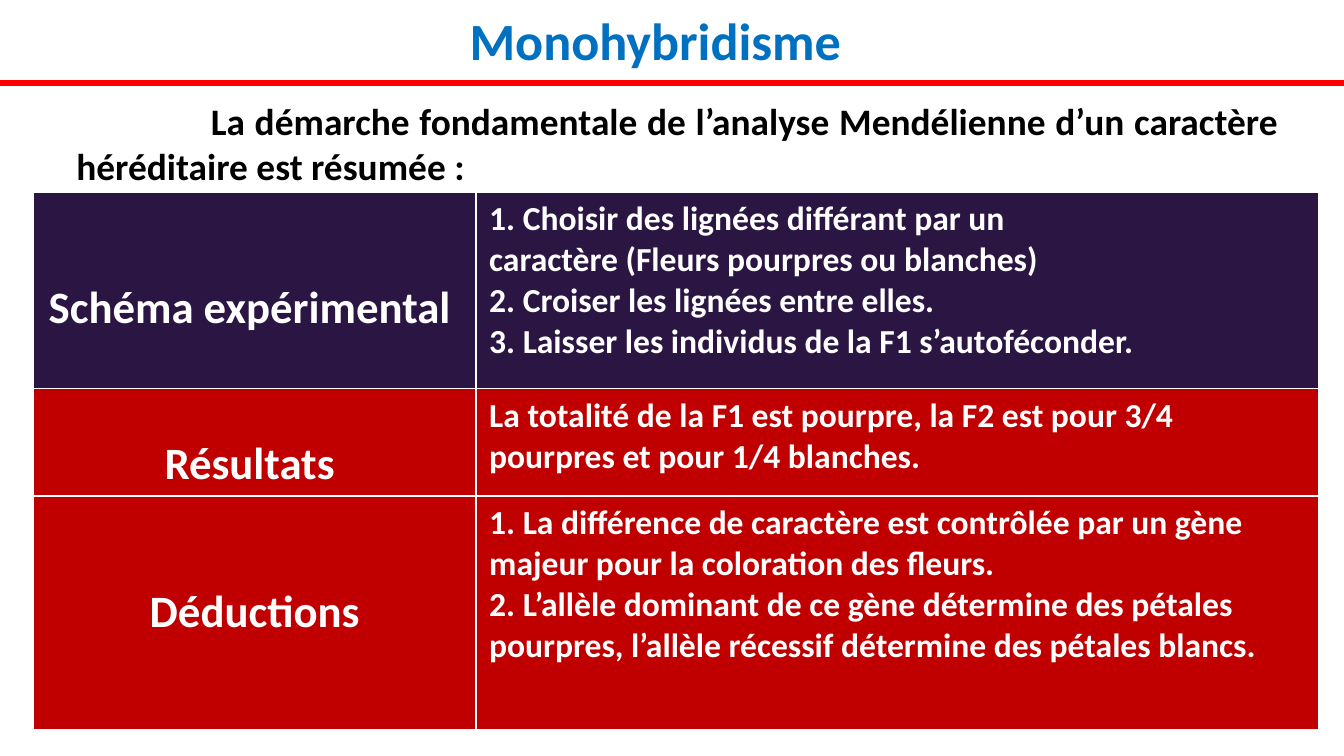
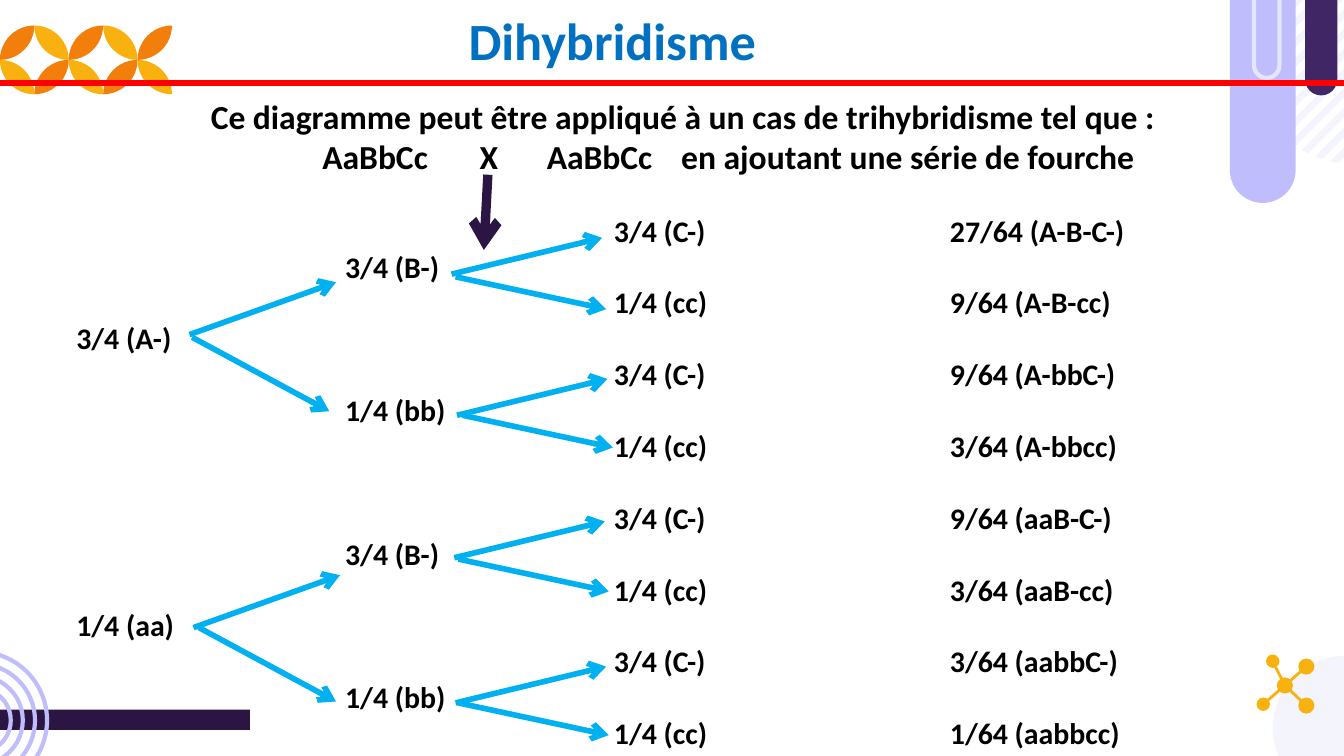
"""Builds two genetics slides: a monohybrid summary table and a trihybrid fork diagram."""
import math

import lxml.etree
import pptx
import pptx.dml.color
import pptx.enum.shapes
import pptx.enum.text
import pptx.oxml.ns
import pptx.util

Inches = pptx.util.Inches
Pt = pptx.util.Pt
qn = pptx.oxml.ns.qn
SHAPE = pptx.enum.shapes.MSO_SHAPE
ALIGN = pptx.enum.text.PP_ALIGN
FONT = "Calibri"
COLORS = {
    "title": "0070C0", "rule": "FF0000", "text": "000000", "white": "FFFFFF",
    "plum": "2A1543", "crimson": "C00000", "sky": "00B0F0", "violet": "402664",
    "lilac": "BFBDFC", "clip": "E5E6FC", "mist": "F4F4FD",
    "orange": "F27F0C", "yellow": "F9B110",
}


def paint(shape, fill=None, line=None, width=2.25):
    shape.shadow.inherit = False
    if fill:
        shape.fill.solid()
        shape.fill.fore_color.rgb = pptx.dml.color.RGBColor.from_string(COLORS[fill])
    else:
        shape.fill.background()
    if line:
        shape.line.color.rgb = pptx.dml.color.RGBColor.from_string(COLORS[line])
        shape.line.width = Pt(width)
    else:
        shape.line.fill.background()


def draw_line(page, start, end, color, width, arrow=False):
    line = page.shapes.add_connector(
        pptx.enum.shapes.MSO_CONNECTOR.STRAIGHT, *map(Inches, start + end))
    line.line.color.rgb = pptx.dml.color.RGBColor.from_string(COLORS[color])
    line.line.width = Pt(width)
    if arrow:
        lxml.etree.SubElement(line.line._get_or_add_ln(), qn("a:tailEnd"), type="arrow")
    lxml.etree.SubElement(line._element.spPr, qn("a:effectLst"))


deck = pptx.Presentation()
deck.slide_width = Inches(10)
deck.slide_height = deck.slide_width * 9 // 16
mono_page, fork_page = [deck.slides.add_slide(deck.slide_layouts[6]) for _ in range(2)]

bar = fork_page.shapes.add_shape(
    SHAPE.RECTANGLE, Inches(-0.26), Inches(5.28), Inches(2.12), Inches(0.15))
bar.rotation = 180
paint(bar, "plum")

rings = [(-0.16, 5.36, radius, None, "lilac") for radius in (0.51, 0.42, 0.33, 0.24)]
for x, y, radius, fill, line in [(10.01, 5.42, 0.54, "mist", None)] + rings:
    disc = fork_page.shapes.add_shape(
        SHAPE.OVAL, Inches(x - radius), Inches(y - radius), Inches(2 * radius), Inches(2 * radius))
    paint(disc, fill, line)

circle_x, circle_y, circle_radius = 10.07, 0.44, 0.78
for index in range(12):
    corners = []
    edge = 9.48 + 1.62 * index / 11
    for diagonal, signs in ((edge, (1, -1)), (edge + 0.07, (-1, 1))):
        offset = (diagonal - circle_x - circle_y) / 2
        reach = math.sqrt(circle_radius ** 2 / 2 - offset ** 2)
        for sign in signs:
            corners.append((Inches(circle_x + offset + sign * reach),
                            Inches(circle_y + offset - sign * reach)))
    builder = fork_page.shapes.build_freeform(*corners[0], scale=1.0)
    builder.add_line_segments(corners[1:], close=True)
    paint(builder.convert_to_shape(), "mist")

for x, width, height, fill, line in (
        (9.71, 0.24, 0.74, "violet", None),
        (9.15, 0.49, 1.54, "lilac", None),
        (9.33, 0.19, 0.61, None, "clip")):
    tube = fork_page.shapes.add_shape(
        SHAPE.ROUND_2_SAME_RECTANGLE, Inches(x), Inches(-0.03), Inches(width), Inches(height))
    tube.rotation = 180
    tube.adjustments[0] = 0.5
    paint(tube, fill, line)

petal = 1.28 / 5
steps = [math.pi / 2 * step / 12 for step in range(13)]
lens = [(1 - math.cos(angle), math.sin(angle)) for angle in steps]
lens += [(v, u) for u, v in reversed(lens[1:-1])]
for column in range(5):
    for row in range(2):
        mirrored = (row + column) % 2 == 0
        points = [(Inches(petal * (column + (1 - u if mirrored else u))),
                   Inches(0.19 + petal * (row + v))) for u, v in lens]
        builder = fork_page.shapes.build_freeform(*points[0], scale=1.0)
        builder.add_line_segments(points[1:], close=True)
        paint(builder.convert_to_shape(), "orange" if mirrored else "yellow")

hub = (9.56, 5.1)
for x, y, radius in ((*hub, 0.06), (9.47, 4.92, 0.05), (9.72, 4.96, 0.06),
                     (9.4, 5.24, 0.05), (9.72, 5.25, 0.06)):
    if (x, y) != hub:
        draw_line(fork_page, hub, (x, y), "yellow", 1.5)
    atom = fork_page.shapes.add_shape(
        SHAPE.OVAL, Inches(x - radius), Inches(y - radius), Inches(2 * radius), Inches(2 * radius))
    paint(atom, "yellow")

mono_lines = [("La démarche fondamentale de l’analyse Mendélienne d’un caractère "
               "héréditaire est résumée :", 20, 1, 0)]
fork_lines = [
    ("Ce diagramme peut être appliqué à un cas de trihybridisme tel que :", 18, 1, 0),
    ("AaBbCc\tX\tAaBbCc\ten ajoutant une série de fourche", 18, 1.83, 0),
]
tree = [
    ("3/4 (A-)", 19.5, [("3/4 (B-)", ["27/64 (A-B-C-)", "9/64 (A-B-cc)"]),
                        ("1/4 (bb)", ["9/64 (A-bbC-)", "3/64 (A-bbcc)"])]),
    ("1/4 (aa)", 19.5, [("3/4 (B-)", ["9/64 (aaB-C-)", "3/64 (aaB-cc)"]),
                        ("1/4 (bb)", ["3/64 (aabbC-)", "1/64 (aabbcc)"])]),
]
column_tabs = "\t" * 4
for root, gap, forks in tree:
    rows = []
    for fork, (dominant, recessive) in forks:
        rows += [column_tabs * 2 + "3/4 (C-)" + column_tabs + dominant,
                 column_tabs + fork,
                 column_tabs * 2 + "1/4 (cc)" + column_tabs + recessive]
    rows.insert(3, root)
    fork_lines += [(text, 16, 0, 0 if index else gap) for index, text in enumerate(rows)]

for page, title, title_width, body_height, inset, lines in (
        (mono_page, "Monohybridisme", 3.05, 0.84, 0.11, mono_lines),
        (fork_page, "Dihybridisme", 2.41, 5.08, 0.09, fork_lines)):
    draw_line(page, (0, 0.62), (10, 0.62), "rule", 3)

    box = page.shapes.add_textbox(Inches(3.35), Inches(0.01), Inches(title_width), Inches(0.57))
    box.text_frame.word_wrap = False
    box.text_frame.text = title
    para = box.text_frame.paragraphs[0]
    para.alignment = ALIGN.CENTER
    span = para.runs[0]
    span.font.name, span.font.size, span.font.bold = FONT, Pt(28), True
    span.font.color.rgb = pptx.dml.color.RGBColor.from_string(COLORS["title"])

    box = page.shapes.add_textbox(Inches(0.47), Inches(0.62), Inches(9.14), Inches(body_height))
    frame = box.text_frame
    frame.word_wrap = True
    frame.margin_top = Inches(inset)
    frame.text = "\n".join(line[0] for line in lines)
    for para, (_, size, indent, gap) in zip(frame.paragraphs, lines):
        para.alignment = ALIGN.JUSTIFY
        para.space_before = Pt(gap)
        properties = para._p.get_or_add_pPr()
        properties.set("marL", "0")
        properties.set("indent", str(Inches(indent)))
        for span in para.runs:
            span.font.name, span.font.size, span.font.bold = FONT, Pt(size), True
            span.font.color.rgb = pptx.dml.color.RGBColor.from_string(COLORS["text"])

table_rows = [
    (1.46, "plum", 0.66, "Schéma expérimental ",
     "1. Choisir des lignées différant par un\n"
     "caractère (Fleurs pourpres ou blanches)\n"
     "2. Croiser les lignées entre elles.\n"
     "3. Laisser les individus de la F1 s’autoféconder."),
    (0.8, "crimson", 0.36, "Résultats ",
     "La totalité de la F1 est pourpre, la F2 est pour 3/4 pourpres et pour 1/4 blanches."),
    (1.74, "crimson", 0.66, "Déductions",
     "1. La différence de caractère est contrôlée par un gène majeur pour la coloration "
     "des fleurs.\n"
     "2. L’allèle dominant de ce gène détermine des pétales pourpres, l’allèle récessif "
     "détermine des pétales blancs."),
]
table = mono_page.shapes.add_table(
    3, 2, Inches(0.25), Inches(1.43), Inches(9.56), Inches(4)).table
table.first_row = table.horz_banding = False
for column, width in zip(table.columns, (3.29, 6.27)):
    column.width = Inches(width)
for row, (height, fill, label_top, label, details) in enumerate(table_rows):
    table.rows[row].height = Inches(height)
    for column, (text, size, top, alignment) in enumerate((
            (label, 24, label_top, ALIGN.CENTER), (details, 18, 0.05, ALIGN.LEFT))):
        cell = table.cell(row, column)
        cell.margin_top, cell.margin_bottom = Inches(top), Inches(0.02)
        for side in ("lnL", "lnR", "lnT", "lnB"):
            border = lxml.etree.SubElement(
                cell._tc.get_or_add_tcPr(), qn("a:" + side), w=str(Pt(1)))
            solid = lxml.etree.SubElement(border, qn("a:solidFill"))
            lxml.etree.SubElement(solid, qn("a:srgbClr"), val=COLORS["white"])
        cell.fill.solid()
        cell.fill.fore_color.rgb = pptx.dml.color.RGBColor.from_string(COLORS[fill])
        cell.text_frame.text = text
        for para in cell.text_frame.paragraphs:
            para.alignment = alignment
            for span in para.runs:
                span.font.name, span.font.size, span.font.bold = FONT, Pt(size), True
                span.font.color.rgb = pptx.dml.color.RGBColor.from_string(COLORS["white"])

branches = [
    ((1.09, -0.39), [(1.41, 2.49), (1.44, 4.67)]),
    ((1.02, 0.55), [(1.43, 2.51), (1.48, 4.67)]),
    ((1.12, -0.27), [(3.36, 2.04), (3.4, 3.09), (3.38, 4.15), (3.39, 5.23)]),
    ((1.12, 0.24), [(3.39, 2.06), (3.44, 3.09), (3.41, 4.16), (3.41, 5.23)]),
]
for (run, rise), starts in branches:
    for x, y in starts:
        draw_line(fork_page, (x, y), (x + run, y + rise), "sky", 3, arrow=True)
draw_line(fork_page, (3.63, 1.3), (3.6, 1.86), "plum", 5, arrow=True)

deck.save("out.pptx")
